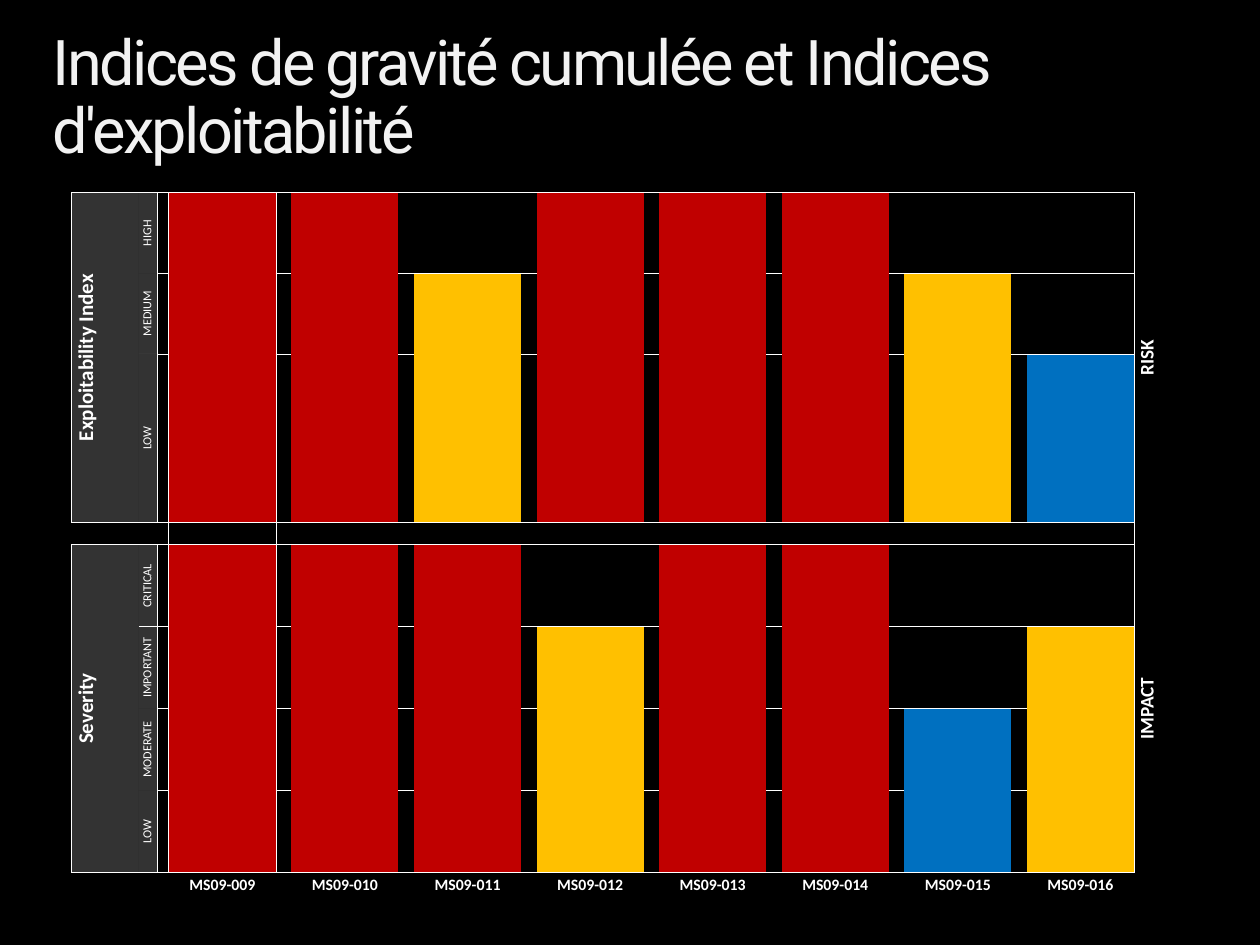
from lxml import etree
from pptx import Presentation
from pptx import util as u
from pptx.dml.color import RGBColor
from pptx.enum import text
from pptx.oxml.ns import qn


def color(value):
    return RGBColor.from_string(value)


def add_borders(cell, sides):
    """Draw thin white lines on the given sides, a string of letters from LRTB."""
    properties = cell._tc.get_or_add_tcPr()
    for side in "LRTB":
        if side in sides:
            line = etree.SubElement(properties, qn(f"a:ln{side}"), w=str(u.Pt(0.5)))
            fill = etree.SubElement(line, qn("a:solidFill"))
            etree.SubElement(fill, qn("a:srgbClr"), val="FFFFFF")


WHITE = "FFFFFF"
LEVEL_COLORS = ["C00000", "FFC000", "0070C0"]  # by number of rows below the top
BULLETINS = [f"MS09-{number:03}" for number in range(9, 17)]
# first row, index name, axis name, levels from the top, bar heights in rows
PANELS = [
    (0, "Exploitability Index", "RISK", ["HIGH", "MEDIUM", "LOW"],
     [3, 3, 2, 3, 3, 3, 2, 1]),
    (4, "Severity", "IMPACT", ["CRITICAL", "IMPORTANT", "MODERATE", "LOW"],
     [4, 4, 4, 3, 4, 4, 2, 3]),
]
FIRST_BAR, LAST_BAR, AXIS = 3, 17, 18
GAP_ROW, LABEL_ROW = 3, 8

presentation = Presentation()
presentation.slide_width, presentation.slide_height = u.Inches(10), u.Inches(7.5)
slide = presentation.slides.add_slide(presentation.slide_layouts[5])
slide.background.fill.solid()
slide.background.fill.fore_color.rgb = color("000000")

# Title
title = slide.shapes.title
title.left, title.top = u.Inches(0.42), u.Inches(0.25)
title.width, title.height = u.Inches(9.17), u.Inches(0.61)
frame = title.text_frame
frame.text = "Indices de gravité cumulée et Indices d'exploitabilité"
frame.word_wrap = True
frame.auto_size = text.MSO_AUTO_SIZE.NONE
frame.vertical_anchor = text.MSO_ANCHOR.TOP
frame.margin_left = frame.margin_right = frame.margin_top = frame.margin_bottom = 0
paragraph = frame.paragraphs[0]
paragraph.alignment = text.PP_ALIGN.LEFT
paragraph.line_spacing = 0.9
run = paragraph.runs[0]
run.font.name, run.font.size = "Roboto", u.Pt(36)
run.font.color.rgb = color("F2F2F2")
run._r.get_or_add_rPr().set("spc", "-150")

# Table grid: heading columns, bars with equal gaps between them, axis column
table_width, bar_width = 8.96, 0.85
heading_widths, axis_width = [0.53, 0.15, 0.09], 0.53
bar_count = len(BULLETINS)
gap_width = (table_width - sum(heading_widths) - axis_width
             - bar_count * bar_width) / (bar_count - 1)
widths = heading_widths + ([bar_width, gap_width] * bar_count)[:-1] + [axis_width]
heights = [0.64, 0.64, 0.65, 0.12] + [0.65] * 4 + [0.18]
table = slide.shapes.add_table(
    len(heights), len(widths), u.Inches(0.57), u.Inches(1.53),
    u.Inches(table_width), u.Inches(sum(heights))).table
table.first_row = table.horz_banding = False
table._tbl.tblPr.find(qn("a:tableStyleId")).text = "{2D5ABB26-0587-4C30-8999-92F81FD0307C}"
for column, width in zip(table.columns, widths):
    column.width = u.Inches(width)
for row, height in zip(table.rows, heights):
    row.height = u.Inches(height)

# Contents by (row, column)
labels, fills = {}, {}
for first, index_name, axis_name, levels, bars in PANELS:
    last = first + len(levels) - 1
    for column, name, size in [(0, index_name, 12), (AXIS, axis_name, 11)]:
        table.cell(first, column).merge(table.cell(last, column))
        labels[first, column] = (name, size, True)
    fills[first, 0] = "D8D8D8"
    for row, level in enumerate(levels, first):
        labels[row, 1] = (level, 7, False)
        fills[row, 1] = "D8D8D8"
    for number, bar_rows in enumerate(bars):
        missing = len(levels) - bar_rows
        top, column = first + missing, FIRST_BAR + 2 * number
        fills[top, column] = LEVEL_COLORS[missing]
        if bar_rows > 1:
            table.cell(top, column).merge(table.cell(last, column))
for number, bulletin in enumerate(BULLETINS):
    labels[LABEL_ROW, FIRST_BAR + 2 * number] = (bulletin, 9, True)

# Cell formatting
for row in range(len(heights)):
    for column in range(len(widths)):
        cell = table.cell(row, column)
        cell.margin_left = cell.margin_right = cell.margin_top = u.Inches(0.01)
        cell.margin_bottom = 0
        paragraph = cell.text_frame.paragraphs[0]
        paragraph._p.get_or_add_endParaRPr().set("sz", "1000")
        if cell.is_spanned:
            continue

        in_panel = row not in (GAP_ROW, LABEL_ROW)
        sides = ""
        if row == LABEL_ROW:
            sides = "T" if column < AXIS else ""
        elif column == AXIS:
            sides = "L"
        elif column >= 2:
            sides = "TB"
            sides += "L" if column == FIRST_BAR or (column == 2 and in_panel) else ""
            sides += "R" if column in (2, LAST_BAR) else ""
        elif in_panel:
            sides = "LTB" if column == 0 else "R"
            if column == 1:
                sides += "T" if row in (0, GAP_ROW + 1) else ""
                sides += "B" if row in (GAP_ROW - 1, LABEL_ROW - 1) else ""
        add_borders(cell, sides)

        if (row, column) in fills:
            cell.fill.solid()
            cell.fill.fore_color.rgb = color(fills[row, column])
            if column < 2:
                shade = cell._tc.tcPr.find(".//" + qn("a:solidFill") + "[last()]")
                shade = cell._tc.tcPr.find(qn("a:solidFill"))[0]
                etree.SubElement(shade, qn("a:alpha"), val="24000")
        else:
            cell.fill.background()

        if (row, column) in labels:
            label, size, bold = labels[row, column]
            paragraph.text = label
            paragraph.alignment = text.PP_ALIGN.CENTER
            font = paragraph.runs[0].font
            font.name, font.size, font.bold = "Calibri", u.Pt(size), bold
            font.color.rgb = color(WHITE)
            if row == LABEL_ROW:
                cell.vertical_anchor = text.MSO_ANCHOR.BOTTOM
            else:
                cell.vertical_anchor = text.MSO_ANCHOR.MIDDLE
                cell._tc.tcPr.set("vert", "vert270")

presentation.save("out.pptx")
